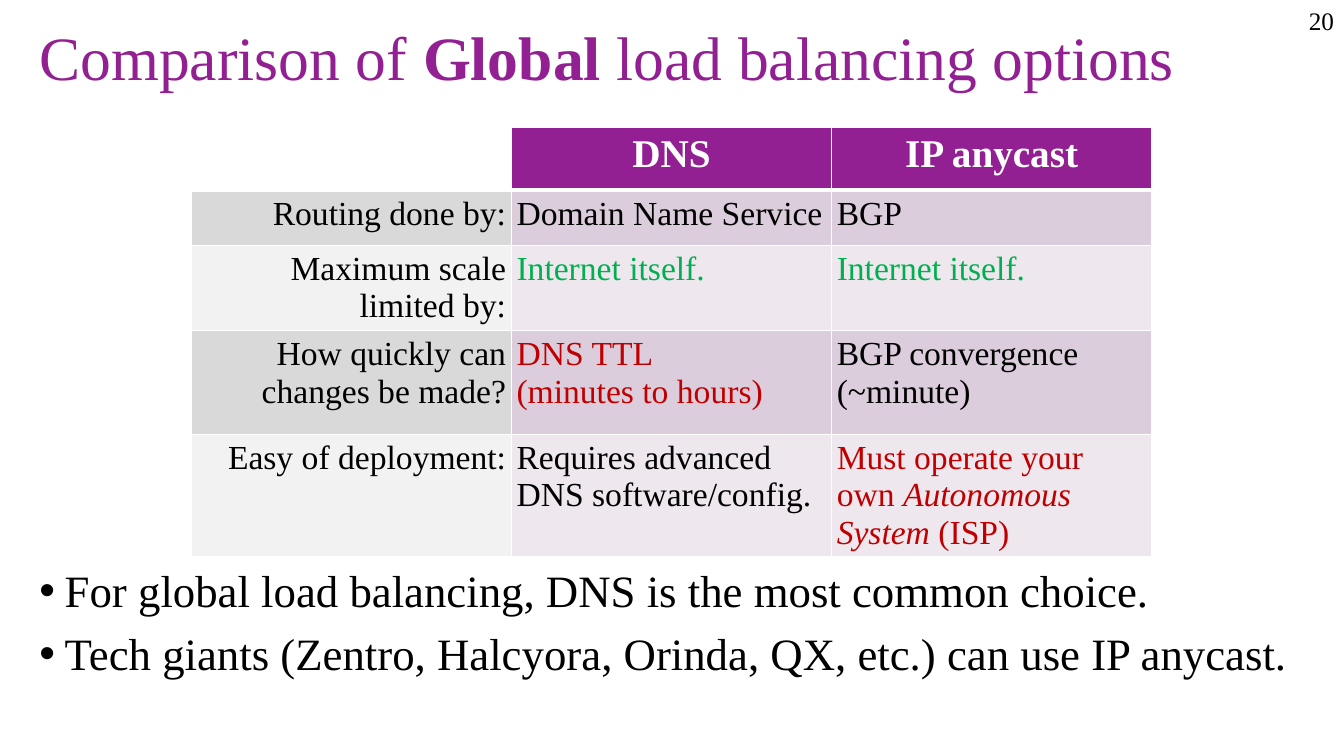
from dataclasses import dataclass

from lxml.etree import SubElement
from pptx import Presentation
from pptx.dml.color import RGBColor
from pptx.enum.text import MSO_ANCHOR as Anchor, MSO_AUTO_SIZE as AutoSize, PP_ALIGN as Align
from pptx.oxml import parse_xml
from pptx.oxml.ns import nsdecls, qn
from pptx.util import Emu, Pt

FONT = "Times New Roman"
PURPLE = RGBColor(0x93, 0x20, 0x92)
WHITE = RGBColor(0xFF, 0xFF, 0xFF)
BLACK = RGBColor(0x00, 0x00, 0x00)
GREEN = RGBColor(0x00, 0xB0, 0x50)
RED = RGBColor(0xC0, 0x00, 0x00)
LABEL_BANDS = (RGBColor(0xD9, 0xD9, 0xD9), RGBColor(0xF2, 0xF2, 0xF2))
VALUE_BANDS = (RGBColor(0xDC, 0xCD, 0xDC), RGBColor(0xEE, 0xE8, 0xEE))

COLUMN_WIDTH = 305
ROW_HEIGHTS = (60, 53, 81, 99, 115)
CELL_INSET = 5


@dataclass(frozen=True)
class Span:
    text: str
    bold: bool = False
    italic: bool = False


@dataclass(frozen=True)
class Entry:
    spans: tuple[Span, ...]
    colour: RGBColor = BLACK


@dataclass(frozen=True)
class Comparison:
    label: str
    dns: Entry
    anycast: Entry


def entry(text: str, colour: RGBColor = BLACK) -> Entry:
    return Entry((Span(text),), colour)


TITLE = (Span("Comparison of "), Span("Global", bold=True), Span(" load balancing options"))
HEADINGS = ("DNS", "IP anycast")
COMPARISONS = (
    Comparison("Routing done by:", entry("Domain Name Service"), entry("BGP")),
    Comparison("Maximum scale\nlimited by:",
               entry("Internet itself.", GREEN), entry("Internet itself.", GREEN)),
    Comparison("How quickly can changes be made?",
               entry("DNS TTL\n(minutes to hours)", RED), entry("BGP convergence (~minute)")),
    Comparison("Easy of deployment:", entry("Requires advanced DNS software/config."),
               Entry((Span("Must operate your own "), Span("Autonomous System", italic=True),
                      Span(" (ISP)")), RED)),
)
CONCLUSIONS = (
    "For global load balancing, DNS is the most common choice.",
    "Tech giants (Zentro, Halcyora, Orinda, QX, etc.) can use IP anycast.",
)


def px(length: int) -> Emu:
    return Emu(length * 9525)


def place(box, left: int, top: int, width: int, height: int) -> None:
    box.left, box.top, box.width, box.height = map(px, (left, top, width, height))


def write(para, spans: tuple[Span, ...], *, size: int, colour: RGBColor = BLACK,
          align: Align = Align.LEFT) -> None:
    """Append the spans to a paragraph, turning newlines into line breaks."""
    para.alignment = align
    for span in spans:
        for number, line in enumerate(span.text.split("\n")):
            if number:
                para.add_line_break()
            run = para.add_run()
            run.text = line
            font = run.font
            font.name, font.size = FONT, Pt(size)
            font.bold, font.italic = span.bold, span.italic
            font.color.rgb = colour


def set_borders(cell, bottom: int = 1) -> None:
    properties = cell._tc.get_or_add_tcPr()
    for index, (side, points) in enumerate((("L", 1), ("R", 1), ("T", 1), ("B", bottom))):
        properties.insert(index, parse_xml(
            f'<a:ln{side} {nsdecls("a")} w="{Pt(points)}"><a:solidFill>'
            f'<a:srgbClr val="{WHITE}"/></a:solidFill></a:ln{side}>'))


def fill_cell(cell, content: Entry, fill: RGBColor, *, size: int = 24,
              align: Align = Align.LEFT) -> None:
    cell.margin_left = cell.margin_right = px(CELL_INSET)
    cell.margin_top = cell.margin_bottom = px(CELL_INSET)
    cell.fill.solid()
    cell.fill.fore_color.rgb = fill
    write(cell.text_frame.paragraphs[0], content.spans, size=size,
          colour=content.colour, align=align)


def add_title(page) -> None:
    box = page.shapes.title
    place(box, 28, 16, 1222, 84)
    frame = box.text_frame
    frame.auto_size = AutoSize.NONE
    frame.vertical_anchor = Anchor.MIDDLE
    para = frame.paragraphs[0]
    para.line_spacing = 0.9
    write(para, TITLE, size=44, colour=PURPLE)


def add_comparison_table(page) -> None:
    columns = len(HEADINGS) + 1
    table = page.shapes.add_table(
        len(ROW_HEIGHTS), columns, px(182), px(121),
        px(COLUMN_WIDTH * columns), px(sum(ROW_HEIGHTS))).table
    table.first_row = table.horz_banding = False
    for column in table.columns:
        column.width = px(COLUMN_WIDTH)
    for row, height in zip(table.rows, ROW_HEIGHTS):
        row.height = px(height)

    table.cell(0, 0).fill.background()
    for column, heading in enumerate(HEADINGS, 1):
        fill_cell(table.cell(0, column), Entry((Span(heading, bold=True),), WHITE),
                  PURPLE, size=28, align=Align.CENTER)
    for row, comparison in enumerate(COMPARISONS, 1):
        band = (row - 1) % 2
        fill_cell(table.cell(row, 0), entry(comparison.label), LABEL_BANDS[band],
                  align=Align.RIGHT)
        for column, value in enumerate((comparison.dns, comparison.anycast), 1):
            fill_cell(table.cell(row, column), value, VALUE_BANDS[band])
    for row in range(len(ROW_HEIGHTS)):
        for column in range(columns):
            set_borders(table.cell(row, column), bottom=1 if row else 3)


def add_conclusions(page) -> None:
    box = page.placeholders[1]
    place(box, 28, 537, 1222, 168)
    frame = box.text_frame
    frame.auto_size = AutoSize.NONE
    for number, text in enumerate(CONCLUSIONS):
        para = frame.add_paragraph() if number else frame.paragraphs[0]
        para.line_spacing = 0.9
        para.space_before = Pt(10)
        write(para, (Span(text),), size=32)
        properties = para._p.get_or_add_pPr()
        properties.set("marL", str(px(24)))
        properties.set("indent", str(-px(24)))
        SubElement(properties, qn("a:buFont"), typeface="Arial")
        SubElement(properties, qn("a:buChar"), char="•")


def add_page_number(page) -> None:
    box = page.shapes.add_textbox(px(1217), px(0), px(63), px(38))
    box.text_frame.word_wrap = True
    write(box.text_frame.paragraphs[0], (Span("20"),), size=18, align=Align.RIGHT)


def main() -> None:
    deck = Presentation()
    deck.slide_width, deck.slide_height = px(1280), px(720)
    page = deck.slides.add_slide(deck.slide_layouts[1])
    add_title(page)
    add_comparison_table(page)
    add_conclusions(page)
    add_page_number(page)
    deck.save("out.pptx")


if __name__ == "__main__":
    main()
